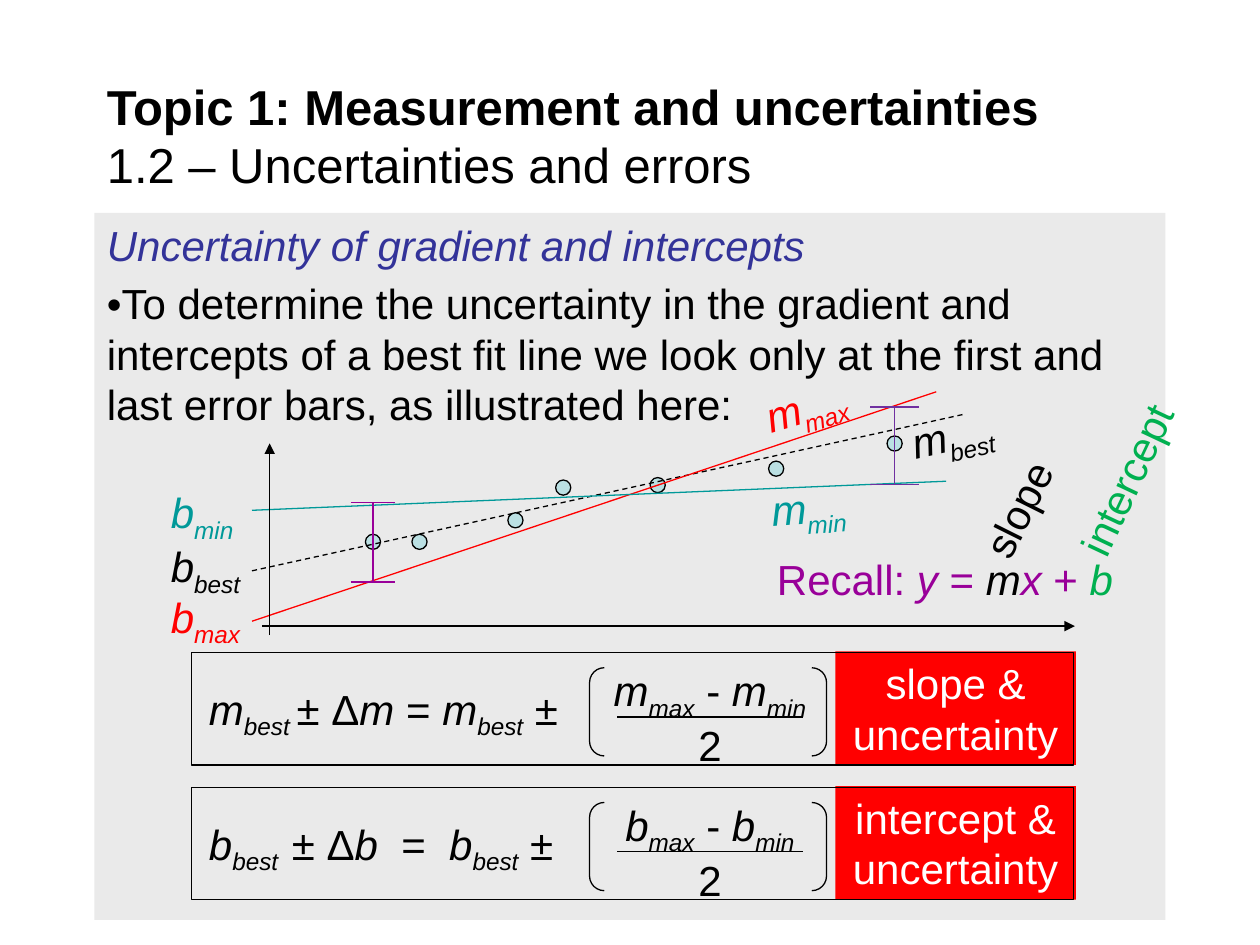
from lxml import etree
from pptx import Presentation
from pptx.dml.color import RGBColor
from pptx.enum.dml import MSO_LINE
from pptx.enum.shapes import MSO_CONNECTOR, MSO_SHAPE
from pptx.enum.text import MSO_ANCHOR, PP_ALIGN
from pptx.oxml.ns import qn
from pptx.util import Pt

STRAIGHT = MSO_CONNECTOR.STRAIGHT
RECTANGLE, OVAL, BRACKETS = MSO_SHAPE.RECTANGLE, MSO_SHAPE.OVAL, MSO_SHAPE.DOUBLE_BRACKET
DASH = MSO_LINE.DASH
TOP, MIDDLE = MSO_ANCHOR.TOP, MSO_ANCHOR.MIDDLE
LEFT, CENTER = PP_ALIGN.LEFT, PP_ALIGN.CENTER
COLORS = {
    "black": "000000", "white": "FFFFFF", "panel": "EAEAEA", "heading": "333399",
    "dot": "BBE0E3", "red": "FF0000", "teal": "009999", "green": "00B050",
    "violet": "7030A0", "purple": "990099",
}
FONT = "Arial"
LABEL_HEIGHT = 28.8
DOT_SIZE = 8.64


def color(name):
    """Return the named colour."""
    return RGBColor.from_string(COLORS[name])


def write(frame, index, runs, ink="black", size=24, align=LEFT, spacing=1.0, before=0):
    """Write one paragraph of (text, style, colour) runs; styles are b, i and s for subscript."""
    paragraph = frame.add_paragraph() if index else frame.paragraphs[0]
    paragraph.alignment = align
    paragraph.line_spacing = spacing
    paragraph.space_before = Pt(before)
    paragraph.font.name, paragraph.font.size = FONT, Pt(size)
    paragraph.font.color.rgb = color(ink)
    for text, style, *own_color in runs:
        if text == "\n":
            paragraph.add_line_break()
            continue
        run = paragraph.add_run()
        run.text = text
        if "b" in style:
            run.font.bold = True
        if "i" in style:
            run.font.italic = True
        if "s" in style:
            run._r.get_or_add_rPr().set("baseline", "-25000")
        if own_color:
            run.font.color.rgb = color(own_color[0])


def add_text(slide, box, paragraphs, rotation=0, anchor=TOP, **look):
    """Add a wrapping text box."""
    shape = slide.shapes.add_textbox(*map(Pt, box))
    shape.rotation = rotation
    shape.text_frame.word_wrap = True
    shape.text_frame.vertical_anchor = anchor
    for index, runs in enumerate(paragraphs):
        write(shape.text_frame, index, runs, **look)


def add_box(slide, kind, box, fill=None, line=None):
    """Add a preset shape with an optional fill and outline."""
    shape = slide.shapes.add_shape(kind, *map(Pt, box))
    shape.shadow.inherit = False
    if fill:
        shape.fill.solid()
        shape.fill.fore_color.rgb = color(fill)
    else:
        shape.fill.background()
    if line:
        shape.line.color.rgb = color(line)
        shape.line.width = Pt(0.75)
    else:
        shape.line.fill.background()
    shape.text_frame.word_wrap = True
    shape.text_frame.vertical_anchor = TOP
    return shape


def add_line(slide, start, end, ink="black", dash=None, arrow=False):
    """Add a thin straight line."""
    line = slide.shapes.add_connector(STRAIGHT, *map(Pt, (*start, *end)))
    line.line.color.rgb = color(ink)
    line.line.width = Pt(0.75)
    if dash:
        line.line.dash_style = dash
    if arrow:
        etree.SubElement(line.line._get_or_add_ln(), qn("a:tailEnd"), type="triangle")
    etree.SubElement(line._element.spPr, qn("a:effectLst"))


def symbol(letter, subscript):
    """Return the runs of an italic letter with a subscript."""
    return [(letter, "i"), (subscript, "is")]


def add_title(slide, box):
    """Add the topic and section heading."""
    add_text(slide, box, [[("Topic 1: Measurement and uncertainties", "b"), ("\n", ""),
                           ("1.2 – Uncertainties and errors", "")]], anchor=MIDDLE, size=28)


def add_panel(slide, box):
    """Add the grey panel with its explanation."""
    frame = add_box(slide, RECTANGLE, box, "panel").text_frame
    write(frame, 0, [("Uncertainty of gradient and intercepts", "i")], "heading")
    write(frame, 1, [("•To determine the uncertainty in the gradient and intercepts of a best "
                      "fit line we look only at the first and last error bars, as illustrated "
                      "here:", "")], before=4.8)


def add_error_bar(slide, x, top, bottom, half_cap, ink):
    """Add a vertical error bar with two caps."""
    add_line(slide, (x, top), (x, bottom), ink)
    for y in (top, bottom):
        add_line(slide, (x - half_cap, y), (x + half_cap, y), ink)


def add_graph(slide, left, top):
    """Add the data points, fit lines, labels, error bars and axes."""
    dots = [(281.5, 67.9), (349.2, 58.5), (416.9, 44.1), (145.4, 100.3),
            (118.8, 100.3), (200.2, 88), (227.5, 69.3)]
    for x, y in dots:
        add_box(slide, OVAL, (left + x, top + y, DOT_SIZE, DOT_SIZE), "dot", "black")

    fits = [
        ("best", "black", DASH, 121.2, (460.1, 31.9), (422.6, 23.2), 347.5, 101),
        ("max", "red", None, 150, (445, 18.9), (338.4, 6), 343.4, 129.8),
        ("min", "teal", None, 86.6, (450.7, 70), (343.4, 66.4), 356, 70),
    ]
    for name, ink, dash, start_y, end, slope_label, rotation, intercept_y in fits:
        add_line(slide, (left + 54, top + start_y), (left + end[0], top + end[1]), ink, dash)
        labels = [("m", slope_label, rotation), ("b", (0.5, intercept_y), 0)]
        for letter, (x, y), angle in labels:
            add_text(slide, (left + x, top + y, 84, LABEL_HEIGHT), [symbol(letter, name)],
                     angle, ink=ink, spacing=0.9, before=4.8)

    add_error_bar(slide, left + 421.2, top + 27.6, top + 71.7, 13.8, "violet")
    add_error_bar(slide, left + 123.1, top + 82.3, top + 127.6, 12.6, "purple")
    add_line(slide, (left + 64.1, top + 157.9), (left + 64.1, top + 48.4), arrow=True)
    add_line(slide, (left + 59.8, top + 152.8), (left + 524.2, top + 152.8), arrow=True)


def add_formula(slide, box, letter, gap, equals, caption):
    """Add a framed uncertainty formula with its red caption."""
    left, top, width, height = box
    best = symbol(letter, "best")
    equation = best + [(gap, "s"), ("± Δ", ""), (letter, "i"), (equals, "")] + best + [(" ±", "")]
    numerator = symbol(letter, "max") + [(" - ", "")] + symbol(letter, "min")
    look = {"spacing": 0.9, "before": 4.8}
    add_text(slide, (left + 2.9, top + 14.4, 337.7, LABEL_HEIGHT), [equation], **look)
    add_text(slide, (left + 223.2, top + 3.6, 146.2, 50.4), [numerator, [("2", "")]],
             align=CENTER, **look)
    add_line(slide, (left + 243.4, top + 36.7), (left + 349.2, top + 36.7))
    brackets = add_box(slide, BRACKETS, (left + 227.5, top + 8.6, 135.4, 50.4), line="black")
    brackets.adjustments[0] = 0.167
    label = add_box(slide, RECTANGLE, (left + 367.9, top - 0.7, 137.5, 64.8), "red")
    write(label.text_frame, 0, [(caption, "")], "white", align=CENTER)
    add_box(slide, RECTANGLE, (left, top, width, height), line="black")


def add_recall(slide, left, top):
    """Add the line equation with its rotated slope and intercept names."""
    equation = [("Recall: ", ""), ("y", "i"), (" = ", ""), ("m", "i", "black"),
                ("x", "i"), (" + ", ""), ("b", "i", "green")]
    add_text(slide, (left, top, 239, 30.2), [equation], ink="purple", align=CENTER, spacing=0.8)
    names = [("slope", "black", (120.9, -51.8, 95.8), 296.5),
             ("intercept", "green", (162, -74.1, 141.1), 295.1)]
    for name, ink, (x, y, width), rotation in names:
        add_text(slide, (left + x, top + y, width, 30.2), [[(name, "")]], rotation,
                 ink=ink, spacing=0.8)


def main():
    """Build and save the slide."""
    presentation = Presentation()
    presentation.slide_width, presentation.slide_height = Pt(720), Pt(540)
    slide = presentation.slides.add_slide(presentation.slide_layouts[6])
    add_panel(slide, (54, 121.7, 612, 403.9))
    add_title(slide, (54, 41.8, 612, 70.6))
    add_graph(slide, 90, 205)
    add_formula(slide, (109.4, 373, 504, 64.1), "m", " ", " = ", "slope & uncertainty")
    add_formula(slide, (109.4, 450, 504, 64.1), "b", "  ", "  =  ", "intercept & uncertainty")
    add_recall(slide, 420.5, 318.2)
    presentation.save("out.pptx")


if __name__ == "__main__":
    main()
